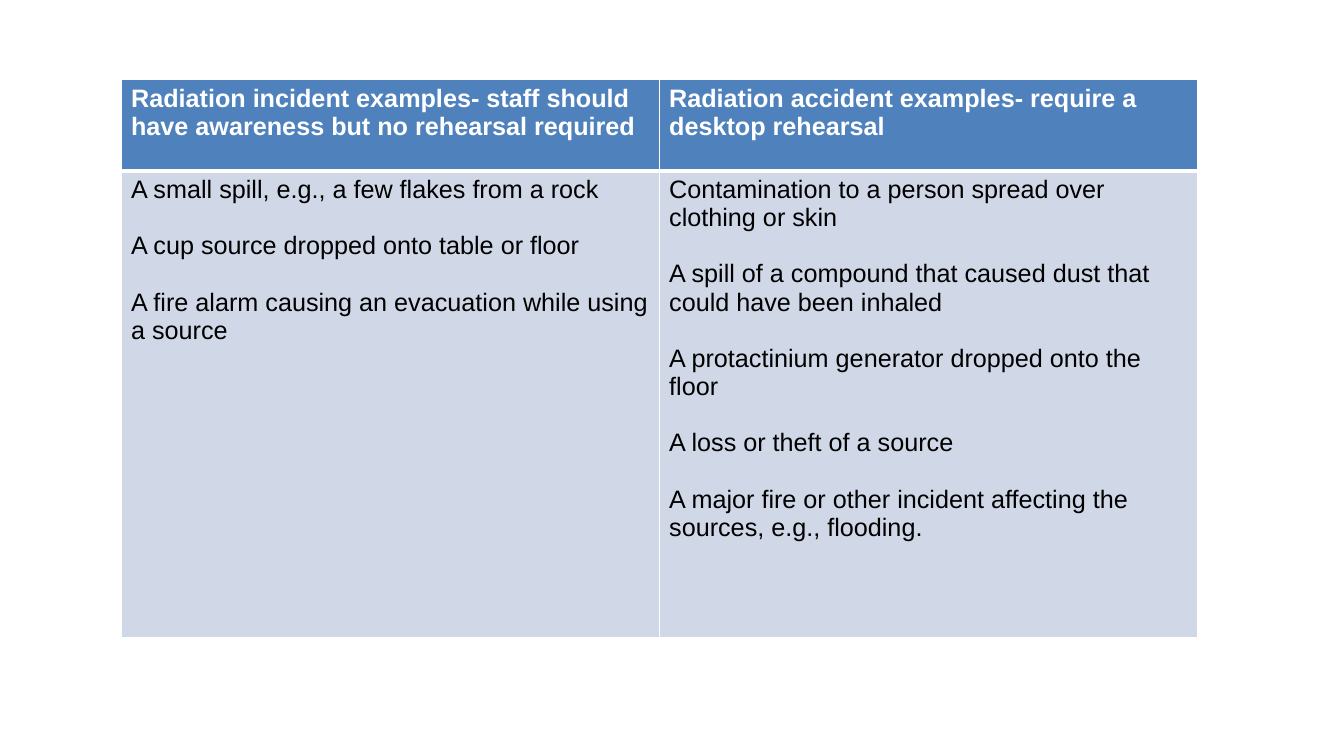
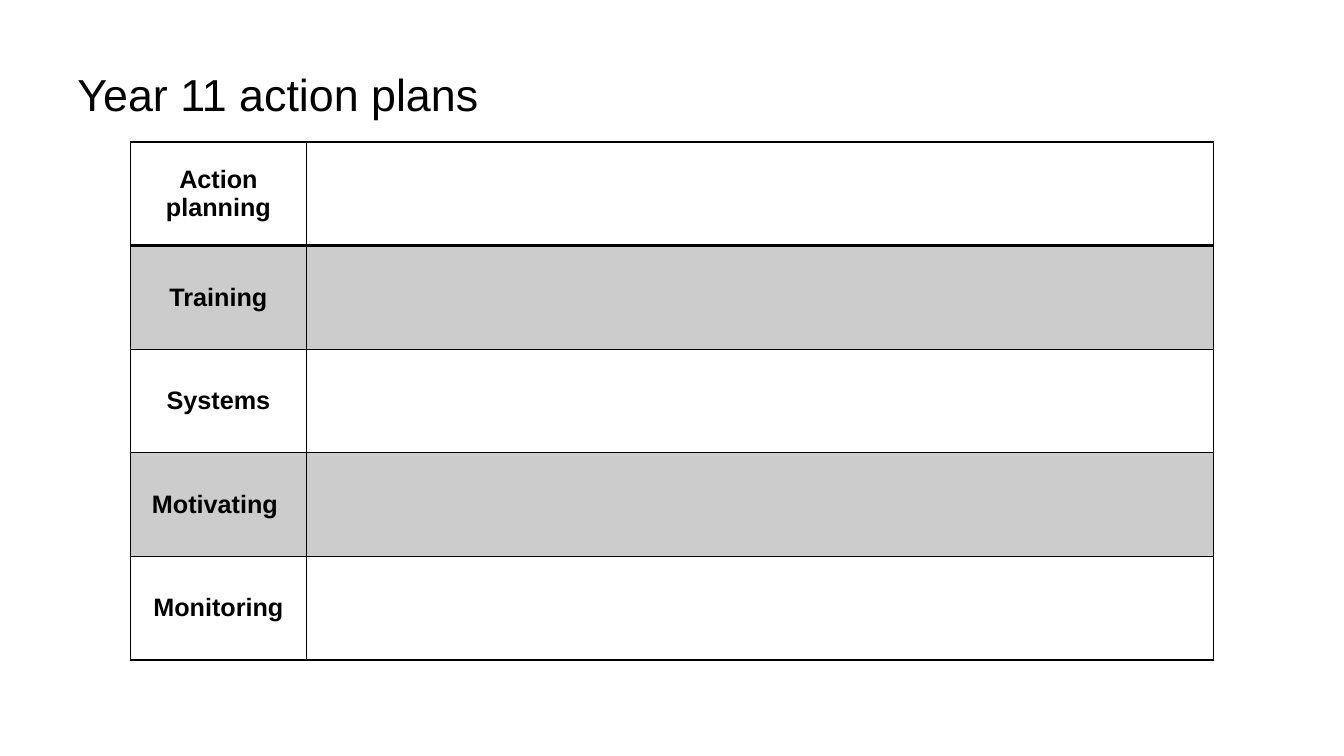
from dataclasses import dataclass

import pptx
import pptx.dml.color
import pptx.enum.text
import pptx.util
from lxml import etree
from pptx.oxml.ns import qn

Cm = pptx.util.Cm
Pt = pptx.util.Pt
RGB = pptx.dml.color.RGBColor.from_string
ALIGN = pptx.enum.text.PP_ALIGN
ANCHOR = pptx.enum.text.MSO_ANCHOR


@dataclass(frozen=True)
class Theme:
    font: str = "Arial"
    title_size: int = 32
    table_size: int = 18
    example_gap: int = 20
    ink: str = "000000"
    paper: str = "FFFFFF"
    header: str = "4F81BD"
    body: str = "D0D8E8"
    band: str = "CCCCCC"


THEME = Theme()


def write(tf, text, size=THEME.table_size, color=THEME.ink, bold=False,
          align=ALIGN.LEFT, gap=0):
    tf.word_wrap = True
    for i, line in enumerate(text.split("\n")):
        p = tf.paragraphs[0] if i == 0 else tf.add_paragraph()
        p.alignment = align
        p.space_before = Pt(gap if i else 0)
        r = p.add_run()
        r.text = line
        r.font.name = THEME.font
        r.font.size = Pt(size)
        r.font.bold = bold
        r.font.color.rgb = RGB(color)


def set_borders(cell, color, top=1, bottom=1):
    tcPr = cell._tc.get_or_add_tcPr()
    for side, width in (("L", 1), ("R", 1), ("T", top), ("B", bottom)):
        ln = etree.SubElement(tcPr, qn(f"a:ln{side}"), w=str(Pt(width)))
        fill = etree.SubElement(ln, qn("a:solidFill"))
        etree.SubElement(fill, qn("a:srgbClr"), val=color)


class Deck:
    def __init__(self, theme):
        self.theme = theme
        self.prs = pptx.Presentation()
        self.prs.slide_width = Cm(33.87)
        self.prs.slide_height = Cm(19.05)
        self.s = None

    def add_slide(self):
        self.s = self.prs.slides.add_slide(self.prs.slide_layouts[6])

    def title(self, text):
        tf = self.s.shapes.add_textbox(Cm(1.7), Cm(0.76), Cm(22.71), Cm(3.18)).text_frame
        tf.vertical_anchor = ANCHOR.MIDDLE
        write(tf, text, size=self.theme.title_size)

    def table(self, left, top, widths, heights, fills, line, header_line):
        tbl = self.s.shapes.add_table(
            len(heights), len(widths), Cm(left), Cm(top),
            Cm(sum(widths)), Cm(sum(heights))).table
        tbl.first_row = tbl.horz_banding = False
        for col, width in zip(tbl.columns, widths):
            col.width = Cm(width)
        for i, (row, height) in enumerate(zip(tbl.rows, heights)):
            row.height = Cm(height)
            for cell in row.cells:
                set_borders(cell, line,
                            top=header_line if i == 1 else 1,
                            bottom=header_line if i == 0 else 1)
                cell.fill.solid()
                cell.fill.fore_color.rgb = RGB(fills[i % len(fills)])
        return tbl

    def examples_table(self, columns):
        t = self.theme
        tbl = self.table(3.05, 2.01, [13.56] * len(columns), [2.29, 11.76],
                         [t.header, t.body], t.paper, header_line=3)
        for c, (heading, examples) in enumerate(columns):
            write(tbl.cell(0, c).text_frame, heading, color=t.paper, bold=True)
            write(tbl.cell(1, c).text_frame, "\n".join(examples), gap=t.example_gap)

    def plan_table(self, labels):
        t = self.theme
        tbl = self.table(3.28, 3.58, [4.45, 22.86], [2.61] * len(labels),
                         [t.paper, t.band], t.ink, header_line=2)
        for i, label in enumerate(labels):
            cell = tbl.cell(i, 0)
            cell.vertical_anchor = ANCHOR.MIDDLE
            write(cell.text_frame, label, bold=True, align=ALIGN.CENTER)


def main():
    deck = Deck(THEME)

    deck.add_slide()
    deck.examples_table([
        ("Radiation incident examples- staff should have awareness but no rehearsal required", [
            "A small spill, e.g., a few flakes from a rock",
            "A cup source dropped onto table or floor",
            "A fire alarm causing an evacuation while using a source",
        ]),
        ("Radiation accident examples- require a desktop rehearsal", [
            "Contamination to a person spread over clothing or skin",
            "A spill of a compound that caused dust that could have been inhaled",
            "A protactinium generator dropped onto the floor",
            "A loss or theft of a source",
            "A major fire or other incident affecting the sources, e.g., flooding.",
        ]),
    ])

    deck.add_slide()
    deck.title("Year 11 action plans")
    deck.plan_table(["Action planning", "Training", "Systems", "Motivating ", "Monitoring"])

    deck.prs.save("out.pptx")


if __name__ == "__main__":
    main()
